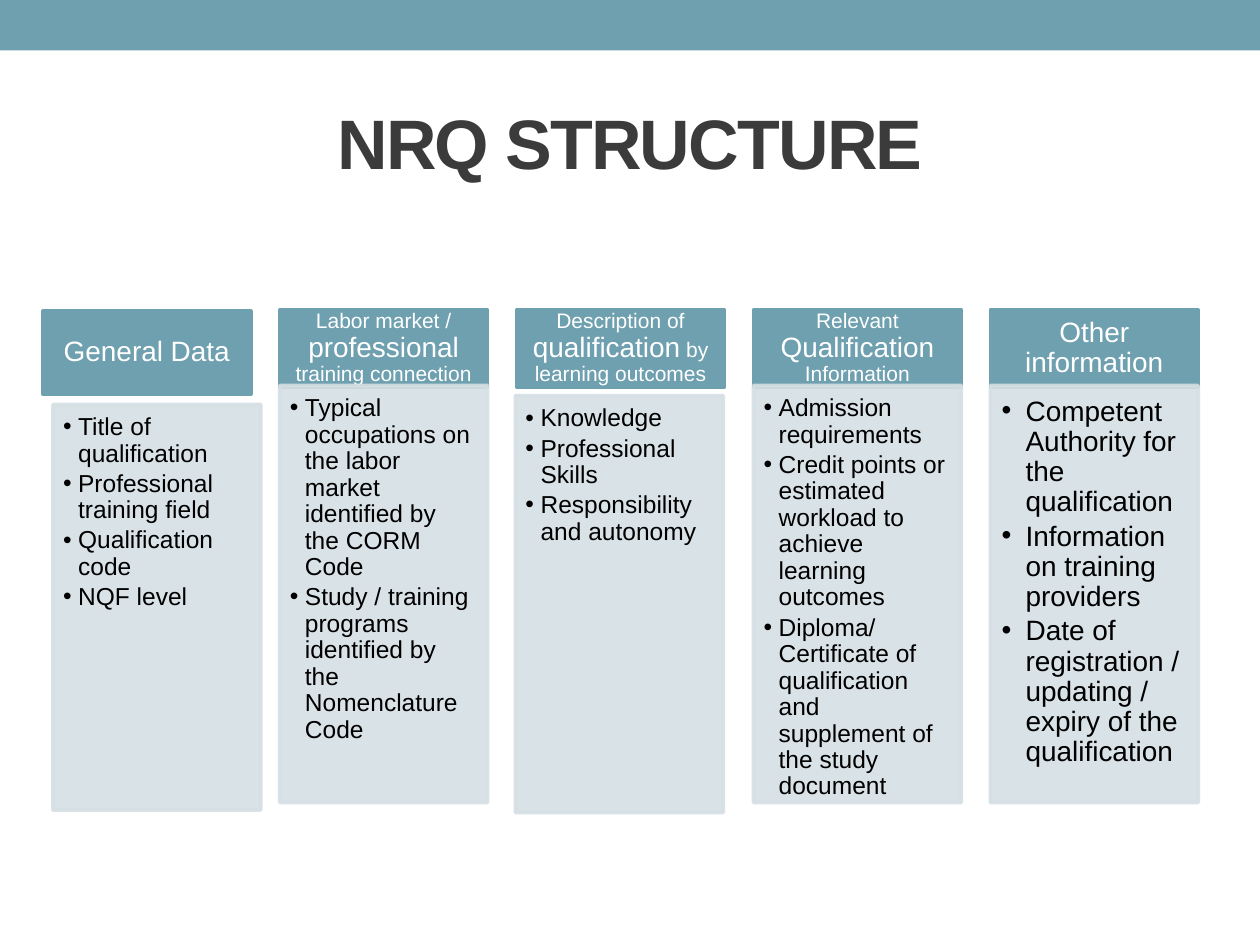
from lxml.etree import SubElement
from pptx import Presentation
from pptx.dml.color import RGBColor
from pptx.enum.shapes import MSO_SHAPE as Shape
from pptx.enum.text import MSO_ANCHOR as Anchor, PP_ALIGN as Align
from pptx.oxml.ns import qn
from pptx.util import Inches, Pt

TEAL, PALE, DARK = "6EA0B0", "D5DFE4", "3B3B3B"
WHITE, BLACK = "FFFFFF", "000000"
WIDE, STEP, LEFT = 1.65, 1.88, 0.34


def color(hexa):
    return RGBColor.from_string(hexa)


def fade(fill, alpha):
    """Set the opacity of a solid fill, in percent."""
    for tone in fill._xPr.iter(qn("a:srgbClr")):
        SubElement(tone, qn("a:alpha"), val=str(alpha * 1000))


def write(par, runs, tint=BLACK, bold=False, track=0, align=Align.LEFT,
          lines=1.0, after=0, indent=0):
    """Fill a paragraph with (text, size) runs; an indent adds a bullet."""
    par.alignment, par.line_spacing, par.space_after = align, lines, Pt(after)
    if indent:
        props = par._p.get_or_add_pPr()
        props.set("marL", str(Inches(indent)))
        props.set("indent", str(-Inches(indent)))
        SubElement(props, qn("a:buFont"), typeface="Arial")
        SubElement(props, qn("a:buChar"), char="•")
    for text, size in runs:
        run = par.add_run()
        run.text = text
        font = run.font
        font.name, font.size, font.bold = "Arial", Pt(size), bold
        font.color.rgb = color(tint)
        if track:
            font._element.set("spc", str(track * 100))


class Deck:
    def __init__(self):
        self.file = Presentation()
        self.file.slide_width, self.file.slide_height = Inches(10), Inches(7.5)
        self.slide = self.file.slides.add_slide(self.file.slide_layouts[6])

    def title(self, text, *box):
        frame = self.slide.shapes.add_textbox(*map(Inches, box)).text_frame
        frame.word_wrap, frame.vertical_anchor = True, Anchor.MIDDLE
        write(frame.paragraphs[0], [(text, 40)], tint=DARK, bold=True,
              track=-1, align=Align.CENTER)

    def block(self, box, fill, pads=(0, 0, 0, 0), anchor=Anchor.TOP,
              edge=True, alpha=100):
        """Draw a rectangle and return its text frame."""
        shape = self.slide.shapes.add_shape(Shape.RECTANGLE, *map(Inches, box))
        shape.shadow.inherit = False
        paints = [shape.fill]
        if edge:
            shape.line.width = Pt(2.08)
            paints.append(shape.line.fill)
        else:
            shape.line.fill.background()
        for paint in paints:
            paint.solid()
            paint.fore_color.rgb = color(fill)
            if alpha < 100:
                fade(paint, alpha)
        frame = shape.text_frame
        frame.word_wrap, frame.vertical_anchor = True, anchor
        (frame.margin_left, frame.margin_top,
         frame.margin_right, frame.margin_bottom) = map(Inches, pads)
        return frame

    def header(self, box, runs):
        pads = (0.12, 0.07) * 2 if len(runs) == 1 else (0.09, 0.05) * 2
        frame = self.block(box, TEAL, pads, Anchor.MIDDLE)
        write(frame.paragraphs[0], runs, tint=WHITE, align=Align.CENTER,
              lines=0.9)

    def panel(self, box, items, size):
        big = size > 14
        pads = (0.09, 0.09, 0.12, 0.14) if big else (0.08, 0.08, 0.11, 0.12)
        frame = self.block(box, PALE, pads, alpha=90)
        for num, item in enumerate(items):
            par = frame.add_paragraph() if num else frame.paragraphs[0]
            write(par, [(item, size)], lines=0.9, after=round(size * 0.15, 1),
                  indent=0.19 if big else 0.12)


# header top and height, panel shift, top and height, item size, header, items
COLUMNS = [
    (2.47, 0.66, 0.08, 3.21, 3.22, 14, [("General Data", 16)],
     ["Title of qualification", "Professional training field",
      "Qualification code", "NQF level"]),
    (2.46, 0.61, 0, 3.06, 3.31, 14,
     [("Labor market / ", 12), ("professional", 16),
      (" training connection", 12)],
     ["Typical occupations on the labor market identified by the CORM Code",
      "Study / training programs identified by the Nomenclature Code"]),
    (2.46, 0.61, -0.01, 3.14, 3.31, 14,
     [("Description of ", 12), ("qualification", 16),
      (" by learning outcomes", 12)],
     ["Knowledge", "Professional Skills", "Responsibility and autonomy"]),
    (2.46, 0.61, 0, 3.06, 3.31, 14,
     [("Relevant ", 12), ("Qualification", 16), (" Information", 12)],
     ["Admission requirements",
      "Credit points or estimated workload to achieve learning outcomes",
      "Diploma/ Certificate of qualification and supplement of the study "
      "document"]),
    (2.46, 0.61, 0, 3.06, 3.31, 16, [("Other information", 16)],
     ["Competent Authority for the qualification",
      "Information on training providers",
      "Date of registration / updating / expiry of the qualification"]),
]


def main():
    deck = Deck()
    deck.block((0, 0, 10, 0.4), TEAL, edge=False)
    deck.title("NRQ STRUCTURE", 0.5, 0.58, 9, 1.08)
    for num, (top, high, shift, low, deep, size, head, items) in enumerate(COLUMNS):
        left = LEFT + num * STEP
        deck.header((left, top, WIDE, high), head)
        deck.panel((left + shift, low, WIDE, deep), items, size)
    deck.file.save("out.pptx")


if __name__ == "__main__":
    main()
